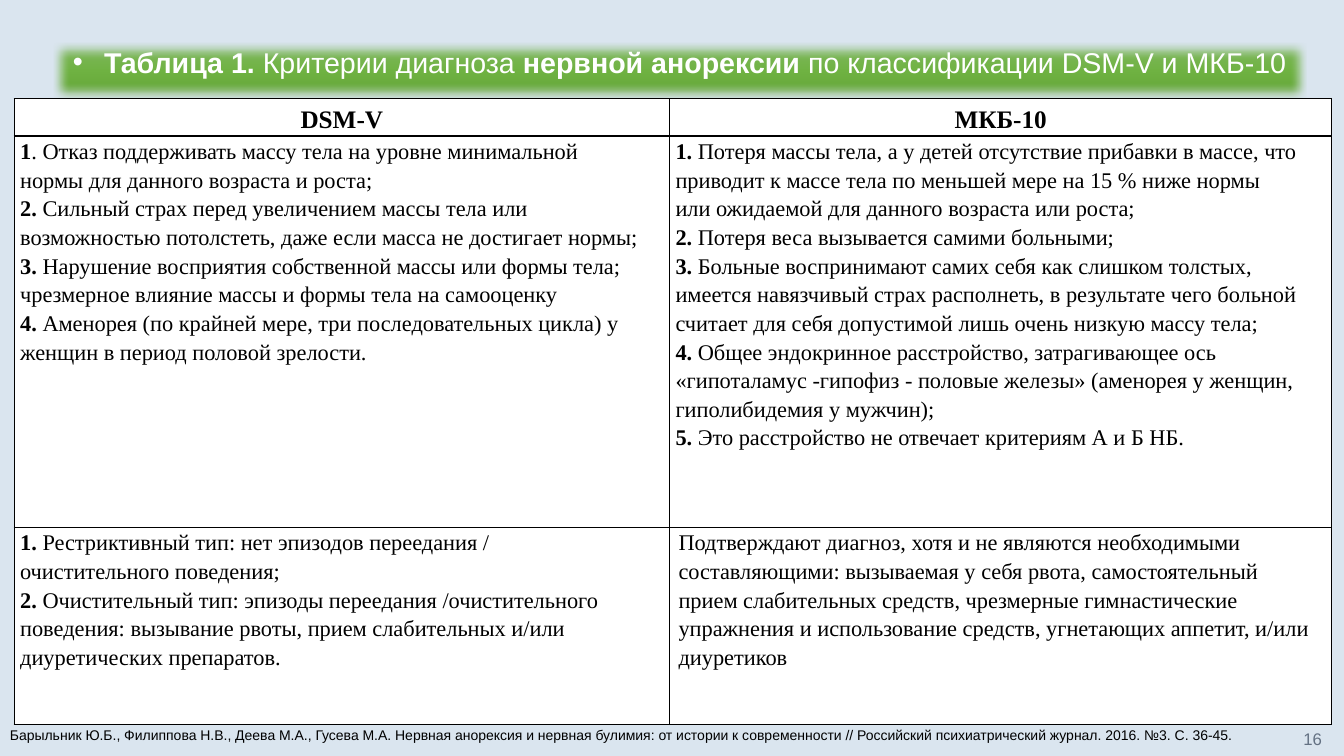
from lxml.etree import SubElement
from pptx import Presentation
from pptx.dml.color import RGBColor
from pptx.enum.text import MSO_ANCHOR as Anchor, MSO_AUTO_SIZE as AutoSize, PP_ALIGN as Align
from pptx.oxml.ns import qn
from pptx.util import Inches, Pt

SANS, SERIF = "Arial", "Times New Roman"
BLACK, WHITE = "000000", "FFFFFF"
GRADIENT = ((0, "81B861"), (50, "6FB242"), (100, "62A336"))

TITLE = ("Таблица 1. |Критерии диагноза |нервной анорексии|"
         " по классификации DSM-V и МКБ-10")
HEADINGS = ("DSM-V", "МКБ-10")
DSM_CRITERIA = (
    "1|. Отказ поддерживать массу тела на уровне минимальной",
    "|нормы для данного возраста и роста;",
    "2. |Сильный страх перед увеличением массы тела или",
    "|возможностью потолстеть, даже если масса не достигает нормы;",
    "3. |Нарушение восприятия собственной массы или формы тела;",
    "|чрезмерное влияние массы и формы тела на самооценку",
    "4. |Аменорея (по крайней мере, три последовательных цикла) у",
    "|женщин в период половой зрелости.",
)
ICD_CRITERIA = (
    "1. |Потеря массы тела, а у детей отсутствие прибавки в массе, что",
    "|приводит к массе тела по меньшей мере на 15 % ниже нормы",
    "|или ожидаемой для данного возраста или роста;",
    "2. |Потеря веса вызывается самими больными;",
    "3. |Больные воспринимают самих себя как слишком толстых,",
    "|имеется навязчивый страх располнеть, в результате чего больной",
    "|считает для себя допустимой лишь очень низкую массу тела;",
    "4. |Общее эндокринное расстройство, затрагивающее ось",
    "|«гипоталамус -гипофиз - половые железы» (аменорея у женщин,",
    "|гиполибидемия у мужчин);",
    "5. |Это расстройство не отвечает критериям А и Б НБ.",
)
DSM_TYPES = (
    "1. |Рестриктивный тип: нет эпизодов переедания /",
    "|очистительного поведения;",
    "2. |Очистительный тип: эпизоды переедания /очистительного",
    "|поведения: вызывание рвоты, прием слабительных и/или",
    "|диуретических препаратов.",
)
ICD_SUPPORT = (
    "|Подтверждают диагноз, хотя и не являются необходимыми составляющими: "
    "вызываемая у себя рвота, самостоятельный прием слабительных средств, "
    "чрезмерные гимнастические упражнения и использование средств, "
    "угнетающих аппетит, и/или диуретиков",
)
SOURCE = ("|Барыльник Ю.Б., Филиппова Н.В., Деева М.А., Гусева М.А. "
          "Нервная анорексия и нервная булимия: от истории к современности "
          "// Российский психиатрический журнал. 2016. №3. С. 36-45.")


def rgb(color):
    return RGBColor.from_string(color)


def apply(target, values):
    for name, value in values.items():
        setattr(target, name, value)


def place(shape, box):
    apply(shape, dict(zip(("left", "top", "width", "height"), map(Inches, box))))


def write(frame, lines, size, font, color, **paragraph_format):
    """Fill a frame; within a line, "|" switches between bold and regular, bold first."""
    for number, line in enumerate(lines):
        paragraph = frame.add_paragraph() if number else frame.paragraphs[0]
        apply(paragraph, paragraph_format)
        for position, words in enumerate(line.split("|")):
            if words:
                run = paragraph.add_run()
                run.text = words
                apply(run.font, {"size": Pt(size), "name": font, "bold": position % 2 == 0})
                run.font.color.rgb = rgb(color)


def add_solid(parent, color):
    SubElement(SubElement(parent, qn("a:solidFill")), qn("a:srgbClr"), val=color)


def format_banner(banner, box):
    """Turn the title placeholder into a soft-edged green bar with a bulleted line."""
    place(banner, box)
    banner.line.color.rgb = rgb("70AD47")
    banner.line.width = Pt(0.5)
    banner.fill.gradient()
    properties = banner.fill._xPr
    stops = properties.find(".//" + qn("a:gsLst"))
    for stop in list(stops):
        stops.remove(stop)
    for percent, color in GRADIENT:
        stop = SubElement(stops, qn("a:gs"), pos=str(percent * 1000))
        SubElement(stop, qn("a:srgbClr"), val=color)
    properties.find(".//" + qn("a:lin")).set("ang", "5400000")
    effects = SubElement(properties, qn("a:effectLst"))
    SubElement(effects, qn("a:softEdge"), rad=str(Pt(6)))

    frame = banner.text_frame
    apply(frame, {"auto_size": AutoSize.NONE, "word_wrap": True, "vertical_anchor": Anchor.TOP})
    write(frame, [TITLE], 20.4, SANS, WHITE,
          alignment=Align.CENTER, line_spacing=0.9, space_before=Pt(10))
    indent = frame.paragraphs[0]._p.get_or_add_pPr()
    indent.set("marL", str(Inches(0.31)))
    indent.set("indent", str(-Inches(0.31)))
    SubElement(indent, qn("a:buFont"), typeface=SANS)
    SubElement(indent, qn("a:buChar"), char="•")


def format_cell(cell, left_margin=0.0, right_margin=0.0, anchor=Anchor.TOP):
    apply(cell, {"margin_left": Inches(left_margin), "margin_right": Inches(right_margin),
                 "margin_top": 0, "margin_bottom": 0, "vertical_anchor": anchor})
    properties = cell._tc.get_or_add_tcPr()
    for side in ("lnL", "lnR", "lnT", "lnB"):
        add_solid(SubElement(properties, qn("a:" + side), w=str(Pt(1))), BLACK)
    cell.fill.solid()
    cell.fill.fore_color.rgb = rgb(WHITE)


def add_criteria_table(slide, box):
    table = slide.shapes.add_table(3, 2, *map(Inches, box)).table
    for column, width in zip(table.columns, (6.5, 6.57)):
        column.width = Inches(width)
    for row, height in zip(table.rows, (0.37, 3.88, 1.96)):
        row.height = Inches(height)
    for column, heading in enumerate(HEADINGS):
        cell = table.cell(0, column)
        format_cell(cell, anchor=Anchor.MIDDLE)
        write(cell.text_frame, [heading], 18, SERIF, BLACK,
              alignment=Align.CENTER, line_spacing=1.15)
    body = ((DSM_CRITERIA, ICD_CRITERIA), (DSM_TYPES, ICD_SUPPORT))
    for row, contents in enumerate(body, 1):
        for column, lines in enumerate(contents):
            cell = table.cell(row, column)
            margins = (0.09, 0.15) if lines is ICD_SUPPORT else (0.06, 0)
            format_cell(cell, *margins)
            write(cell.text_frame, lines, 16, SERIF, BLACK, line_spacing=1.15)


def add_note(slide, box, words, size, color, alignment=Align.LEFT, anchor=Anchor.TOP):
    frame = slide.shapes.add_textbox(*map(Inches, box)).text_frame
    apply(frame, {"word_wrap": True, "vertical_anchor": anchor})
    write(frame, [words], size, SANS, color, alignment=alignment)


def main():
    deck = Presentation()
    apply(deck, {"slide_width": Inches(13.33), "slide_height": Inches(7.5)})
    slide = deck.slides.add_slide(deck.slide_layouts[5])
    background = slide.background.fill
    background.solid()
    background.fore_color.rgb = rgb("DAE5EF")
    format_banner(slide.shapes.title, (0.53, 0.43, 12.42, 0.55))
    add_criteria_table(slide, (0.14, 0.98, 13.07, 6.21))
    add_note(slide, (0, 7.16, 12.61, 0.27), SOURCE, 10, BLACK)
    add_note(slide, (12.61, 7.19, 0.6, 0.27), "|16", 12, "637183", Align.RIGHT, Anchor.MIDDLE)
    deck.save("out.pptx")


if __name__ == "__main__":
    main()
